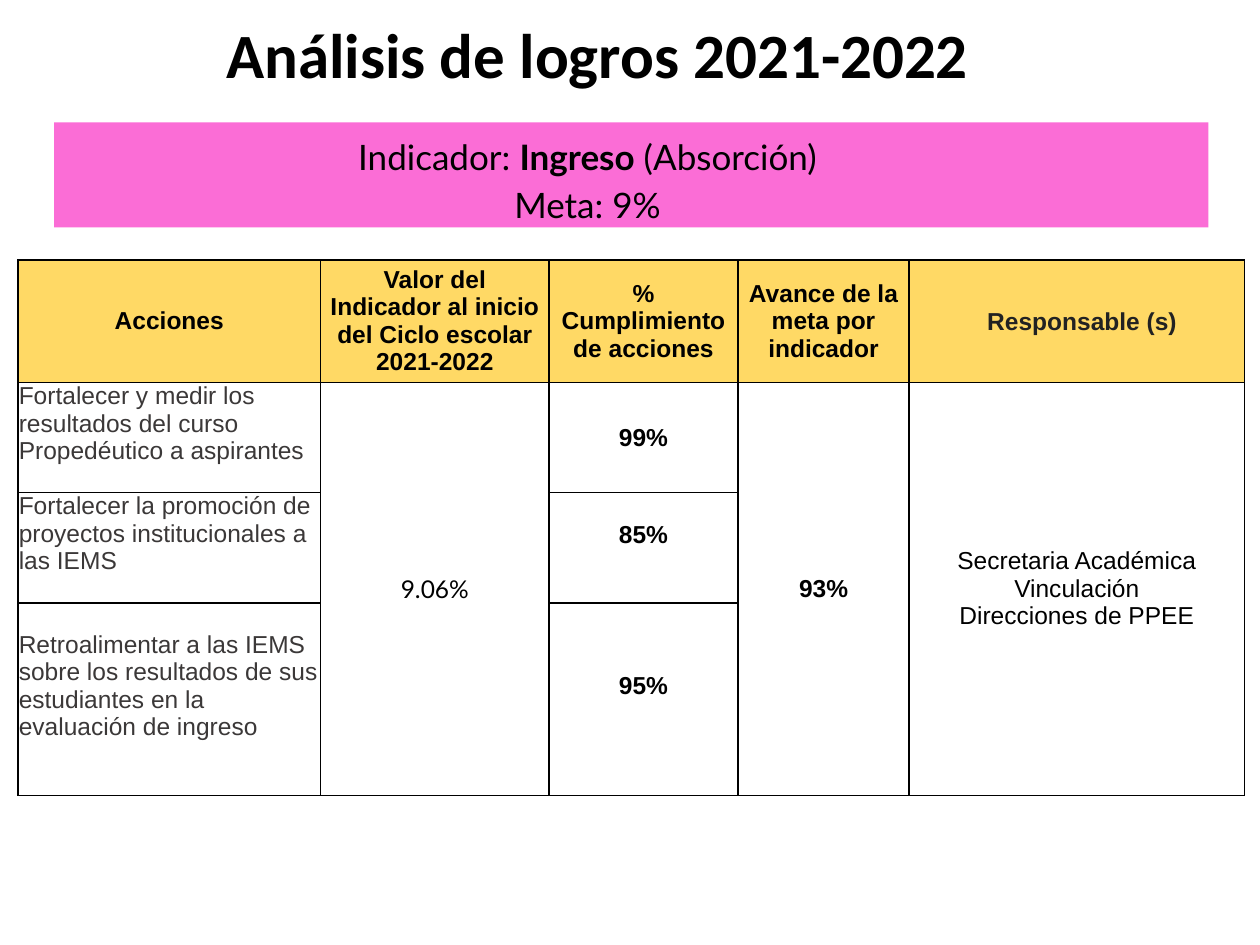
from lxml import etree
from pptx import Presentation
from pptx.dml.color import RGBColor
from pptx.enum import shapes, text
from pptx.oxml import ns
from pptx.util import Pt

HUES = {"black": "000000", "white": "FFFFFF", "gold": "FFD965",
        "pink": "FB6DD6", "gray": "3B3838", "dark": "222222"}
MID = text.MSO_ANCHOR.MIDDLE
TOP = text.MSO_ANCHOR.TOP
CENTER = text.PP_ALIGN.CENTER
LEFT = text.PP_ALIGN.LEFT


def add_run(para, words, size, face, hue="black", bold=False):
    run = para.add_run()
    run.text = words
    font = run.font
    font.size, font.name, font.bold = Pt(size), face, bold
    font.color.rgb = RGBColor.from_string(HUES[hue])


def paint(item, hue):
    item.fill.solid()
    item.fill.fore_color.rgb = RGBColor.from_string(HUES[hue])


deck = Presentation()
deck.slide_width, deck.slide_height = Pt(720), Pt(540)
slide = deck.slides.add_slide(deck.slide_layouts[5])

# Title
title = slide.shapes.title
title.left, title.top, title.width, title.height = Pt(119.5), Pt(16), Pt(444), Pt(35)
paint(title, "white")
title.text_frame.vertical_anchor = MID
para = title.text_frame.paragraphs[0]
para.alignment, para.line_spacing = CENTER, 0.9
add_run(para, "Análisis de logros 2021-2022", 36, "Calibri", bold=True)

# Table of actions
cols = [173, 130.5, 108, 97.75, 191.75]
rows = [70, 63, 63, 110]
grid = slide.shapes.add_table(len(rows), len(cols), Pt(10.25), Pt(148.5),
                              Pt(sum(cols)), Pt(sum(rows))).table
for col, width in zip(grid.columns, cols):
    col.width = Pt(width)
for row, height in zip(grid.rows, rows):
    row.height = Pt(height)

for cell in grid.iter_cells():
    props = cell._tc.get_or_add_tcPr()
    for side in "LRTB":
        line = etree.SubElement(props, ns.qn("a:ln" + side), w=str(Pt(1)))
        fill = etree.SubElement(line, ns.qn("a:solidFill"))
        etree.SubElement(fill, ns.qn("a:srgbClr"), val=HUES["black"])
    paint(cell, "white")
for col in (1, 3, 4):
    grid.cell(1, col).merge(grid.cell(3, col))

# row, column, lines, face, colour, bold, alignment, anchor, side, top and bottom margins
heads = ["Acciones", "Valor del Indicador al inicio del Ciclo escolar 2021-2022",
         "% Cumplimiento de acciones", "Avance de la meta por indicador",
         "Responsable (s)"]
tasks = [("Fortalecer y medir los resultados del curso Propedéutico a aspirantes", "99%", 0, 0),
         ("Fortalecer la promoción de proyectos institucionales a las IEMS", "85%", 0, 15),
         ("Retroalimentar a las IEMS sobre los resultados de sus estudiantes "
          "en la evaluación de ingreso", "95%", 16, 15)]
team = ["Secretaria Académica", "Vinculación", "Direcciones de PPEE"]

cells = [(0, c, [head], "Arial", "dark" if c == 4 else "black", True, CENTER, MID, 5, 0, 0)
         for c, head in enumerate(heads)]
for r, (task, rate, above, below) in enumerate(tasks, 1):
    cells.append((r, 0, [task], "Arial", "gray", False, LEFT, TOP, 0.5, above, 0))
    cells.append((r, 2, [rate], "Arial", "black", True, CENTER, MID, 0.5, 0, below))
cells += [(1, 1, ["9.06%"], "Lato", "black", False, CENTER, MID, 0.5, 0, 0),
          (1, 3, ["93%"], "Arial", "black", True, CENTER, MID, 5, 0, 0),
          (1, 4, team, "Arial", "black", False, CENTER, MID, 5, 0, 0)]

for r, c, lines, face, hue, bold, align, anchor, side, above, below in cells:
    cell = grid.cell(r, c)
    cell.vertical_anchor = anchor
    cell.margin_left = cell.margin_right = Pt(side)
    cell.margin_top, cell.margin_bottom = Pt(above), Pt(below)
    if r == 0:
        paint(cell, "gold")
    frame = cell.text_frame
    for n, words in enumerate(lines):
        para = frame.add_paragraph() if n else frame.paragraphs[0]
        para.alignment = align
        add_run(para, words, 14, face, hue, bold)
last = grid.cell(0, 4).text_frame.paragraphs[0]
last.line_spacing = 1.07
last._p.get_or_add_pPr().set("marL", str(Pt(6)))

# Indicator band
band = slide.shapes.add_shape(shapes.MSO_SHAPE.RECTANGLE, Pt(31), Pt(70), Pt(659.5), Pt(60))
band.shadow.inherit = False
paint(band, "pink")
band.line.fill.background()
frame = band.text_frame
frame.word_wrap = True
frame.vertical_anchor = TOP
goal = [[("Indicador: ", False), ("Ingreso", True), (" (Absorción)", False)],
        [("Meta: 9%", False)]]
for n, runs in enumerate(goal):
    para = frame.add_paragraph() if n else frame.paragraphs[0]
    para.alignment, para.line_spacing = CENTER, 1.15
    for words, bold in runs:
        add_run(para, words, 20, "Lato", bold=bold)
frame.paragraphs[0]._p.get_or_add_pPr().set("marR", str(Pt(50)))

deck.save("out.pptx")
